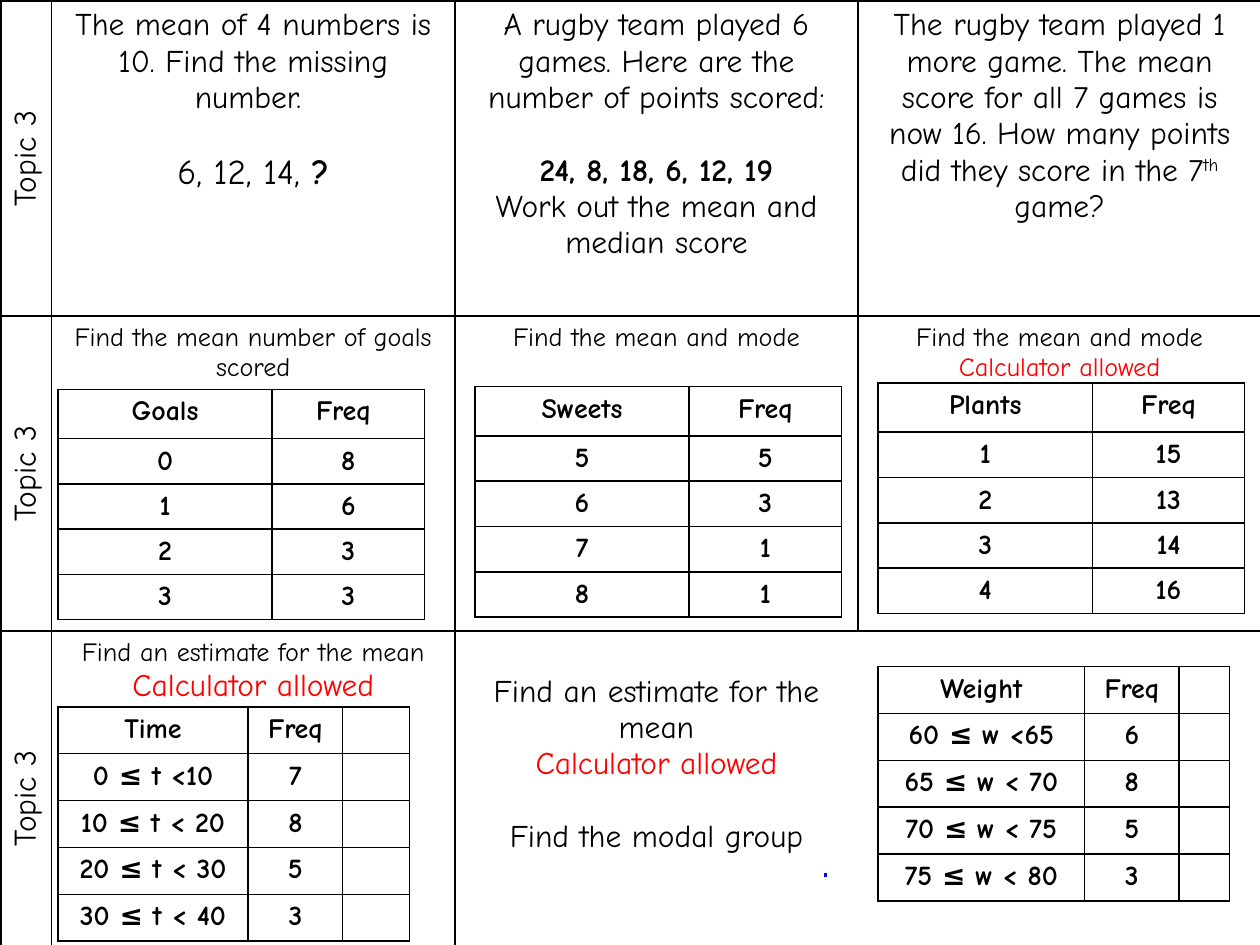
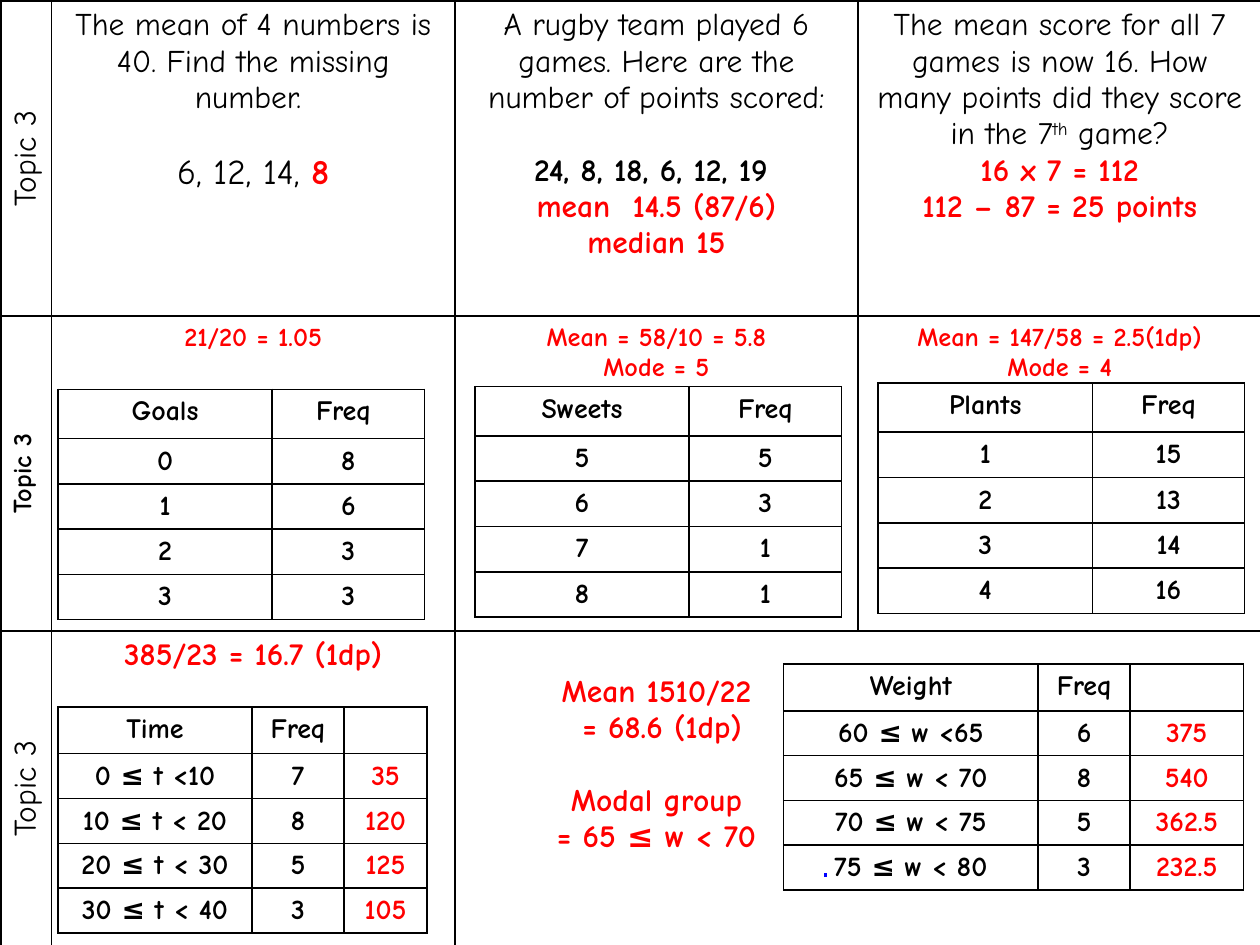
"""Build a statistics question slide and its answer slide as bordered grids."""
from dataclasses import dataclass

from lxml.etree import SubElement
from pptx import Presentation
from pptx.dml.color import RGBColor as Color
from pptx.enum.text import PP_ALIGN as Align
from pptx.oxml.ns import qn
from pptx.util import Pt


@dataclass(frozen=True)
class Theme:
    font: str = "Comic Neue"
    ink: str = "000000"
    answer: str = "FF0000"
    tick: str = "0000FF"
    large: int = 20
    normal: int = 18
    data: int = 16
    small: int = 15
    margin: float = 3.6
    blank_line: float = 20.7


theme = Theme()
NO_STYLE = "{2D5ABB26-0587-4C30-8999-92F81FD0307C}"


def write(cell, text, size=theme.normal, bold=False, color=theme.ink, gap=0, joined=False, raised=False):
    """Add text to a cell, as a new paragraph unless joined to the last one."""
    frame = cell.text_frame
    para = frame.paragraphs[-1]
    if para.runs and not joined:
        para = frame.add_paragraph()
        para.space_before = Pt(gap)
    elif gap:
        cell.margin_top = Pt(theme.margin + gap)
    para.alignment = Align.CENTER
    if not text:
        SubElement(para._p, qn("a:endParaRPr"), sz=str(size * 100))
        return
    span = para.add_run()
    span.text = text
    span.font.name = theme.font
    span.font.size = Pt(size)
    span.font.bold = bold
    span.font.color.rgb = Color.from_string(color)
    if raised:
        span.font._element.set("baseline", "30000")


def add_grid(page, left, top, widths, heights, open_sides=()):
    """Add an unfilled table with black borders, except on the open cell sides."""
    frame = page.shapes.add_table(len(heights), len(widths), Pt(left), Pt(top), Pt(sum(widths)), Pt(sum(heights)))
    table = frame.table
    table.first_row = table.horz_banding = False
    table._tbl.tblPr.find(qn("a:tableStyleId")).text = NO_STYLE
    for column, width in zip(table.columns, widths):
        column.width = Pt(width)
    for row, height in zip(table.rows, heights):
        row.height = Pt(height)
    for r in range(len(heights)):
        for c in range(len(widths)):
            cell = table.cell(r, c)
            props = cell._tc.get_or_add_tcPr()
            for side in "LRTB":
                line = SubElement(props, qn(f"a:ln{side}"), w=str(Pt(1)))
                if (r, c, side) in open_sides:
                    SubElement(line, qn("a:noFill"))
                else:
                    fill = SubElement(line, qn("a:solidFill"))
                    SubElement(fill, qn("a:srgbClr"), val=theme.ink)
            cell.fill.background()
    return table


small = dict(size=theme.small)
red = dict(color=theme.answer)
answer = dict(color=theme.answer, bold=True)
small_answer = dict(answer, size=theme.small)
spaced = dict(gap=theme.blank_line)
rugby = "A rugby team played 6 games. Here are the number of points scored:"

questions = [
    (0, 1, "The mean of 4 numbers is 10. Find the missing number. ", {}),
    (0, 1, "6, 12, 14, ", dict(spaced, size=theme.large)),
    (0, 1, "?", dict(size=theme.large, bold=True, joined=True)),
    (0, 2, rugby, {}),
    (0, 2, "24, 8, 18, 6, 12, 19", dict(spaced, bold=True)),
    (0, 2, "Work out the mean and median score", {}),
    (0, 3, "The rugby team played 1 more game. The mean score for all 7 games is now 16. "
           "How many points did they score in the 7", {}),
    (0, 3, "th", dict(joined=True, raised=True)),
    (0, 3, " game?", dict(joined=True)),
    (1, 1, "Find the mean number of goals scored", small),
    (1, 2, "Find the mean and mode", small),
    (1, 3, "Find the mean and mode", small),
    (1, 3, "Calculator allowed", dict(small, **red)),
    (2, 1, "Find an estimate for the mean ", small),
    (2, 1, "Calculator allowed", dict(red, joined=True)),
    (2, 2, "Find an estimate for the mean", spaced),
    (2, 2, "Calculator allowed", red),
    (2, 2, "Find the modal group", spaced),
]
answers = [
    (0, 1, "The mean of 4 numbers is 40. Find the missing number. ", {}),
    (0, 1, "6, 12, 14, ", dict(spaced, size=theme.large)),
    (0, 1, "8", dict(answer, size=theme.large, joined=True)),
    (0, 2, rugby, {}),
    (0, 2, "24, 8, 18, 6, 12, 19 ", dict(spaced, bold=True)),
    (0, 2, "mean  14.5 (87/6)", answer),
    (0, 2, "median 15", answer),
    (0, 3, "The mean score for all 7 games is now 16. How many points did they score in the 7", {}),
    (0, 3, "th", dict(joined=True, raised=True)),
    (0, 3, " game?", dict(joined=True)),
    (0, 3, "16 x 7 = 112", answer),
    (0, 3, "112 – 87 = 25 points", answer),
    (1, 1, "21/20 = 1.05", small_answer),
    (1, 2, "Mean = 58/10 = 5.8", small_answer),
    (1, 2, "Mode = 5", small_answer),
    (1, 3, "Mean = 147/58 = 2.5(1dp)", small_answer),
    (1, 3, "Mode = 4", small_answer),
    (2, 1, "385/23 = 16.7 (1dp)", answer),
    (2, 2, "Mean 1510/22", dict(answer, **spaced)),
    (2, 2, " = 68.6 (1dp)", answer),
    (2, 2, "Modal group", dict(answer, **spaced)),
    (2, 2, "= 65 ≤ w < 70", answer),
]

times = [("Time", "Freq"), ("0 ≤ t <10", "7"), ("10 ≤ t < 20", "8"), ("20 ≤ t < 30", "5"), ("30 ≤ t < 40", "3")]
weights = [("Weight", "Freq"), ("60 ≤ w <65", "6"), ("65 ≤ w < 70", "8"), ("70 ≤ w < 75", "5"), ("75 ≤ w < 80", "3")]
goals = [("Goals", "Freq "), ("0", "8"), ("1", "6"), ("2", "3"), ("3", "3")]
sweets = [("Sweets", "Freq"), ("5", "5"), ("6", "3"), ("7", "1"), ("8", "1")]
plants = [("Plants", "Freq"), ("1", "15"), ("2", "13"), ("3", "14"), ("4", "16")]

no_products = [""] * 5
time_products = ["", "35", "120", "125", "105"]
weight_products = ["", "375", "540", "362.5", "232.5"]

pair_widths = [122.4, 87.1]
pair_heights = [28.1] + [25.9] * 4
group_heights = [25.6] * 5
pair_tables = [(271.4, 221, sweets), (33.1, 222.5, goals), (501.8, 218.9, plants)]

pages = [
    (questions, 191, {}, [
        (33.1, 403.9, [108.7, 54, 38.2], times, no_products),
        (501.8, 380.9, [118, 54, 28.8], weights, no_products),
    ]),
    (answers, 180, dict(small, bold=True), [
        (33.1, 403.9, [110.9, 52.6, 47.5], times, time_products),
        (447.8, 379.4, [145.4, 52.6, 64.8], weights, weight_products),
    ]),
]

deck = Presentation()
deck.slide_width, deck.slide_height = Pt(720), Pt(540)

for content, last_height, middle_topic, group_tables in pages:
    page = deck.slides.add_slide(deck.slide_layouts[6])
    board = add_grid(page, 0.7, 0.7, [28.8] + [230.4] * 3, [180, 180, last_height], {(2, 2, "R"), (2, 3, "L")})
    for r, topic_format in enumerate([{}, middle_topic, {}]):
        topic = board.cell(r, 0)
        topic._tc.get_or_add_tcPr().set("vert", "vert270")
        write(topic, "Topic 3", **topic_format)
    for r, c, text, text_format in content:
        write(board.cell(r, c), text, **text_format)

    builder = page.shapes.build_freeform(Pt(471.6), Pt(501.1))
    builder.add_line_segments([(Pt(471.6), Pt(499))], close=False)
    tick = builder.convert_to_shape()
    tick.shadow.inherit = False
    tick.fill.background()
    tick.line.color.rgb = Color.from_string(theme.tick)
    tick.line.width = Pt(1.5)

    data_tables = [(left, top, pair_widths, pair_heights, rows) for left, top, rows in pair_tables]
    for left, top, widths, rows, products in group_tables:
        full_rows = [(*row, product) for row, product in zip(rows, products)]
        data_tables.append((left, top, widths, group_heights, full_rows))
    for left, top, widths, heights, rows in data_tables:
        table = add_grid(page, left, top, widths, heights)
        for r, row in enumerate(rows):
            for c, text in enumerate(row):
                color = theme.answer if c == 2 else theme.ink
                write(table.cell(r, c), text, size=theme.data, bold=True, color=color)

deck.save("out.pptx")
